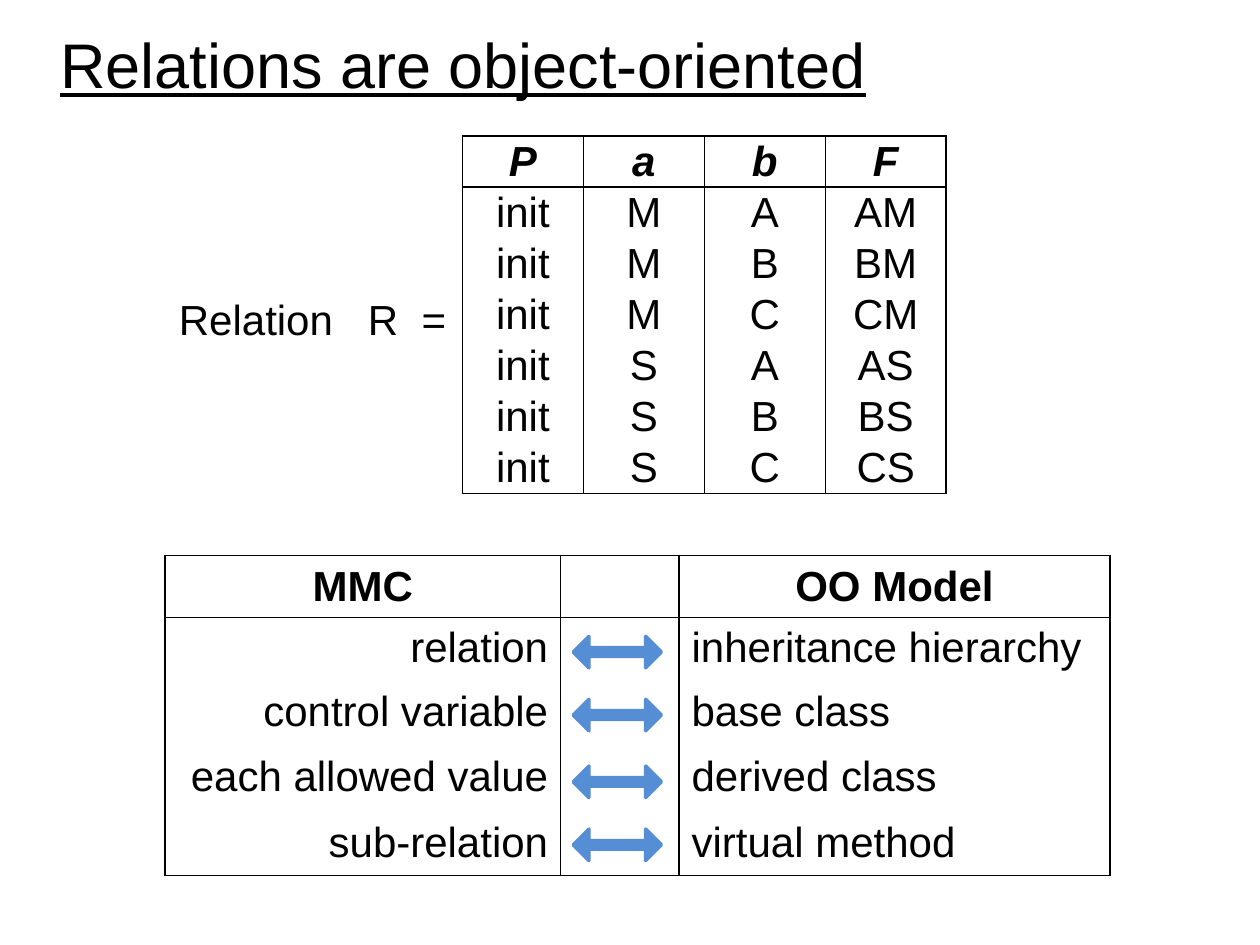
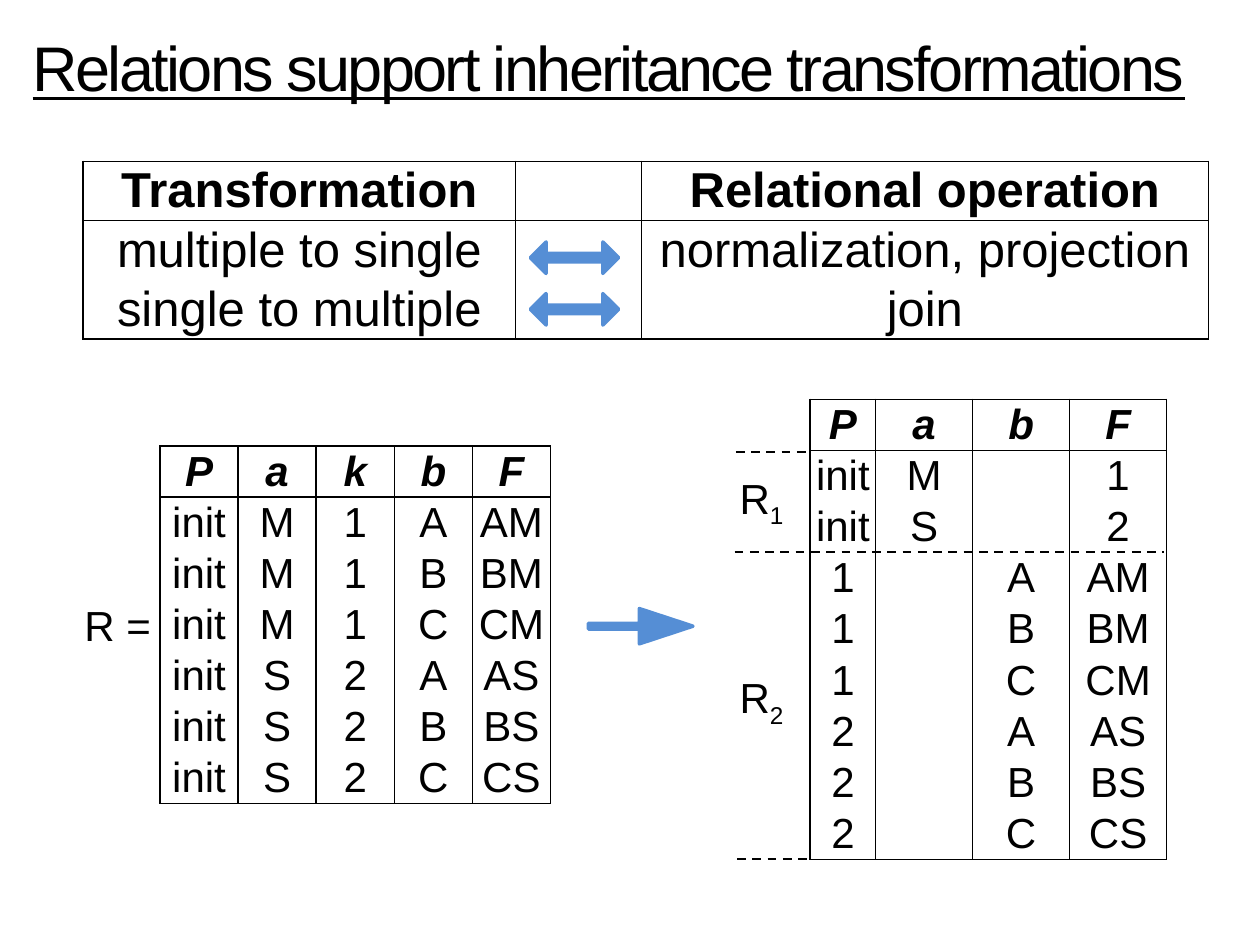
from dataclasses import dataclass
from itertools import product

from lxml.etree import SubElement
from pptx import Presentation
from pptx.dml.color import RGBColor
from pptx.enum.dml import MSO_LINE
from pptx.enum.shapes import MSO_CONNECTOR, MSO_SHAPE
from pptx.enum.text import MSO_ANCHOR, PP_ALIGN
from pptx.oxml.ns import qn
from pptx.util import Inches, Pt


@dataclass(frozen=True)
class Theme:
    font: str = "Arial"
    ink: RGBColor = RGBColor(0, 0, 0)
    accent: RGBColor = RGBColor(0x55, 0x8E, 0xD5)
    title_size: int = 36
    body_size: int = 24
    large_size: int = 28
    rule_width: float = 1
    dash_width: float = 1.25
    arrow_line_width: float = 2


THEME = Theme()
LEFT, CENTER, RIGHT = PP_ALIGN.LEFT, PP_ALIGN.CENTER, PP_ALIGN.RIGHT
TITLE_ONLY_LAYOUT = 5


@dataclass(frozen=True)
class TextRun:
    text: str
    size: int = THEME.body_size
    bold: bool = False
    italic: bool = False
    underline: bool = False
    spacing: float = 0  # extra points after each character
    baseline: int = 0  # percent


@dataclass(frozen=True)
class Box:
    left: float
    top: float
    width: float
    height: float

    def lengths(self) -> tuple:
        return tuple(Inches(n) for n in (self.left, self.top, self.width, self.height))


@dataclass(frozen=True)
class Grid:
    left: float
    top: float
    columns: tuple
    row_heights: tuple
    rows: list  # header first
    size: int = THEME.body_size
    header_italic: bool = False
    header_rule: bool = True
    side_margin: float = 0
    body_alignments: tuple = (CENTER,) * 5


@dataclass(frozen=True)
class Arrow:
    box: Box
    kind: MSO_SHAPE
    adjustments: tuple


@dataclass(frozen=True)
class Rule:
    start: float
    end: float
    top: float
    width: float = THEME.rule_width
    dashed: bool = False


# Text
def add_run(paragraph, text_run: TextRun) -> None:
    run = paragraph.add_run()
    run.text = text_run.text
    font = run.font
    font.name, font.size = THEME.font, Pt(text_run.size)
    font.bold, font.italic = text_run.bold, text_run.italic
    font.underline = text_run.underline
    font.color.rgb = THEME.ink
    properties = run._r.get_or_add_rPr()
    if text_run.spacing:
        properties.set("spc", str(round(text_run.spacing * 100)))
    if text_run.baseline:
        properties.set("baseline", str(text_run.baseline * 1000))


def fill_text(shape, text_runs: list[TextRun]) -> None:
    frame = shape.text_frame
    frame.margin_left = frame.margin_right = frame.margin_top = frame.margin_bottom = 0
    frame.word_wrap = True
    frame.vertical_anchor = MSO_ANCHOR.TOP
    paragraph = frame.paragraphs[0]
    paragraph.alignment = LEFT
    for text_run in text_runs:
        add_run(paragraph, text_run)


def add_label(slide, box: Box, text_runs: list[TextRun]) -> None:
    fill_text(slide.shapes.add_textbox(*box.lengths()), text_runs)


def add_titled_slide(presentation, box: Box, text: str, spacing: float = 0):
    slide = presentation.slides.add_slide(presentation.slide_layouts[TITLE_ONLY_LAYOUT])
    title = slide.shapes.title
    title.left, title.top, title.width, title.height = box.lengths()
    fill_text(title, [TextRun(text, THEME.title_size, underline=True, spacing=spacing)])
    return slide


# Tables
def set_borders(cell, top: bool, bottom: bool) -> None:
    properties = cell._tc.get_or_add_tcPr()
    for tag, visible in (("a:lnL", True), ("a:lnR", True), ("a:lnT", top), ("a:lnB", bottom)):
        border = SubElement(properties, qn(tag), w=str(Pt(THEME.rule_width)))
        if visible:
            fill = SubElement(border, qn("a:solidFill"))
            SubElement(fill, qn("a:srgbClr"), val=str(THEME.ink))
        else:
            SubElement(border, qn("a:noFill"))


def add_grid(slide, grid: Grid) -> None:
    box = Box(grid.left, grid.top, sum(grid.columns), sum(grid.row_heights))
    table = slide.shapes.add_table(len(grid.rows), len(grid.columns), *box.lengths()).table
    table.first_row = table.horz_banding = False
    for column, width in zip(table.columns, grid.columns):
        column.width = Inches(width)
    last = len(grid.rows) - 1
    for i, (height, values) in enumerate(zip(grid.row_heights, grid.rows)):
        table.rows[i].height = Inches(height)
        header = i == 0
        for j, value in enumerate(values):
            cell = table.cell(i, j)
            cell.margin_left = cell.margin_right = Inches(grid.side_margin)
            cell.margin_top = cell.margin_bottom = 0
            cell.vertical_anchor = MSO_ANCHOR.MIDDLE
            set_borders(cell, top=header or (i == 1 and grid.header_rule),
                        bottom=i == last or (header and grid.header_rule))
            cell.fill.background()
            paragraph = cell.text_frame.paragraphs[0]
            paragraph.alignment = CENTER if header else grid.body_alignments[j]
            if value:
                add_run(paragraph, TextRun(value, grid.size, bold=header,
                                           italic=header and grid.header_italic))


def relation_grid(left: float, top: float, height: float, columns: tuple, rows: list) -> Grid:
    heights = (height / len(rows),) * len(rows)
    return Grid(left, top, columns, heights, rows, header_italic=True)


# Arrows and lines
def add_arrow(slide, arrow: Arrow) -> None:
    shape = slide.shapes.add_shape(arrow.kind, *arrow.box.lengths())
    for i, adjustment in enumerate(arrow.adjustments):
        shape.adjustments[i] = adjustment
    shape.shadow.inherit = False
    shape.fill.solid()
    shape.fill.fore_color.rgb = THEME.accent
    shape.line.color.rgb = THEME.accent
    shape.line.width = Pt(THEME.arrow_line_width)


def add_equivalences(slide, left: float, tops: tuple) -> None:
    for top in tops:
        add_arrow(slide, Arrow(Box(left, top, 0.7, 0.25), MSO_SHAPE.LEFT_RIGHT_ARROW, (0.27, 0.5)))


def add_rule(slide, rule: Rule) -> None:
    line = slide.shapes.add_connector(MSO_CONNECTOR.STRAIGHT, Inches(rule.start),
                                      Inches(rule.top), Inches(rule.end), Inches(rule.top))
    line.line.color.rgb = THEME.ink
    line.line.width = Pt(rule.width)
    if rule.dashed:
        line.line.dash_style = MSO_LINE.DASH
    SubElement(line._element.spPr, qn("a:effectLst"))


# Slides
def build_object_oriented(presentation) -> None:
    slide = add_titled_slide(presentation, Box(0.48, 0.2, 6.77, 0.61),
                             "Relations are object-oriented")
    rows = [("P", "a", "b", "F")]
    rows += [("init", a, b, b + a) for a, b in product("MS", "ABC")]
    add_grid(slide, relation_grid(3.67, 1.08, 2.84, (0.96,) * 4, rows))
    add_label(slide, Box(1.42, 2.33, 2.16, 0.4), [
        TextRun("Relation"), TextRun(" ", spacing=13.33), TextRun("R"),
        TextRun(" ", spacing=6.67), TextRun("=")])

    # Correspondence with the object model
    add_grid(slide, Grid(
        1.31, 4.41, (3.14, 0.94, 3.42), (0.49, 0.49, 0.52, 0.52, 0.52),
        [("MMC", "", "OO Model"),
         ("relation", "", "inheritance hierarchy"),
         ("control variable", "", "base class"),
         ("each allowed value", "", "derived class"),
         ("sub-relation", "", "virtual method")],
        header_rule=False, side_margin=0.1, body_alignments=(RIGHT, CENTER, LEFT)))
    add_equivalences(slide, 4.55, (5.05, 5.55, 6.08, 6.58))
    add_rule(slide, Rule(1.32, 8.81, 4.9))


def build_transformations(presentation) -> None:
    slide = add_titled_slide(presentation, Box(0.26, 0.23, 9.32, 0.61),
                             "Relations support inheritance transformations", spacing=-1.5)
    keys = {"M": "1", "S": "2"}

    # Single relation
    single = [("P", "a", "k", "b", "F")]
    single += [("init", a, keys[a], b, b + a) for a, b in product(keys, "ABC")]
    add_grid(slide, relation_grid(1.27, 3.54, 2.84, (0.62,) * 5, single))
    add_label(slide, Box(0.67, 4.76, 0.53, 0.4), [TextRun("R =")])
    add_arrow(slide, Arrow(Box(4.67, 4.83, 0.83, 0.28), MSO_SHAPE.RIGHT_ARROW, (0.16, 1.52)))

    # Split relation
    split = [("P", "a", "b", "F")]
    split += [("init", a, "", key) for a, key in keys.items()]
    split += [(keys[a], "", b, b + a) for a, b in product(keys, "ABC")]
    add_grid(slide, relation_grid(6.43, 3.17, 3.65, (0.52, 0.77, 0.77, 0.77), split))
    for index, top in (("1", 3.75), ("2", 5.33)):
        add_label(slide, Box(5.87, top, 0.42, 0.4),
                  [TextRun("R"), TextRun(index, baseline=-25)])
    for start, end, top in ((5.84, 6.42, 3.59), (5.83, 9.24, 4.38), (5.85, 6.43, 6.82)):
        add_rule(slide, Rule(start, end, top, THEME.dash_width, dashed=True))

    # Transformations and their operations
    add_grid(slide, Grid(
        0.66, 1.28, (3.43, 1, 4.5), (0.47,) * 3,
        [("Transformation", "", "Relational operation"),
         ("multiple to single", "", "normalization, projection"),
         ("single to multiple", "", "join")],
        size=THEME.large_size))
    add_equivalences(slide, 4.21, (1.92, 2.33))


def main() -> None:
    presentation = Presentation()
    presentation.slide_width, presentation.slide_height = Inches(10), Inches(7.5)
    build_object_oriented(presentation)
    build_transformations(presentation)
    presentation.save("out.pptx")


if __name__ == "__main__":
    main()
